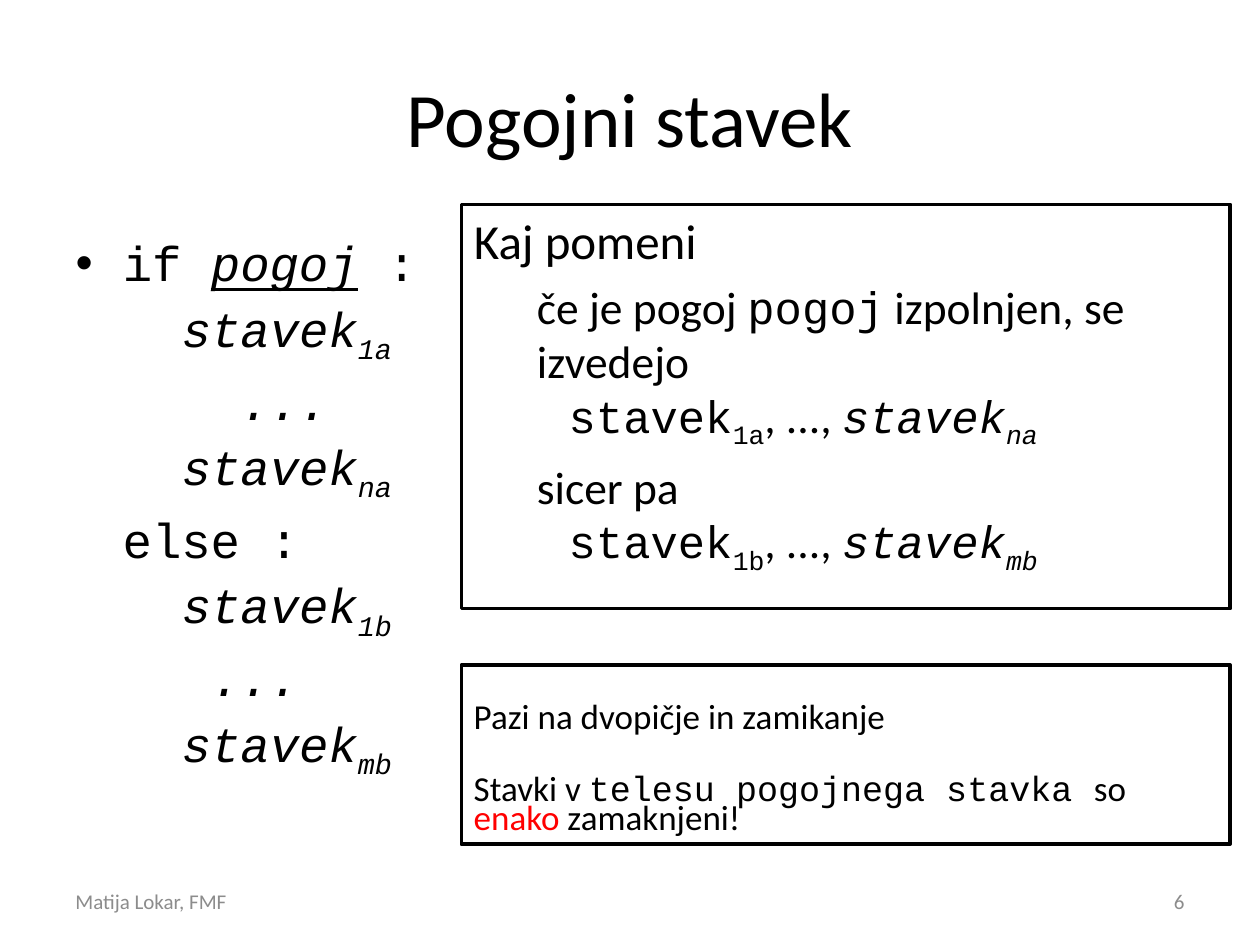
"""Build the slide on the conditional statement."""
import pptx
import pptx.dml.color
import pptx.enum.text
import pptx.oxml
import pptx.util

Cm, Pt = pptx.util.Cm, pptx.util.Pt
enum = pptx.enum.text
ns = "http://schemas.openxmlformats.org/drawingml/2006/main"
sans, mono = "Calibri", "Courier New"


def color(code):
    """Turn a hex string into a colour."""
    return pptx.dml.color.RGBColor.from_string(code)


def write(frame, size, rows, ink="000000"):
    """Fill a frame with rows of (left indent, paragraph format, runs)."""
    frame.word_wrap = True
    frame.auto_size = enum.MSO_AUTO_SIZE.NONE
    for num, (left, form, runs) in enumerate(rows):
        par = frame.add_paragraph() if num else frame.paragraphs[0]
        for key, val in form.items():
            setattr(par, key, val)
        if left is not None:
            prop = par._p.get_or_add_pPr()
            prop.set("marL", str(Cm(left)))
            prop.set("indent", "0")
            prop.append(pptx.oxml.parse_xml(f'<a:buNone xmlns:a="{ns}"/>'))
        for text, look in runs:
            run = par.add_run()
            run.text = text
            look = {"name": sans, "size": Pt(size), "ink": ink, **look}
            run.font.color.rgb = color(look.pop("ink"))
            if look.pop("sub", False):
                run._r.get_or_add_rPr().set("baseline", "-25000")
            for key, val in look.items():
                setattr(run.font, key, val)


code = {"name": mono}
slant = {"name": mono, "italic": True}
low = {"name": mono, "sub": True}
tilt = {**slant, "sub": True}

deck = pptx.Presentation()
deck.slide_width, deck.slide_height = Cm(25.4), Cm(19.05)
slide = deck.slides.add_slide(deck.slide_layouts[3])
title, list_, mean = slide.placeholders
note, foot, page = [slide.shapes.add_textbox(0, 0, 0, 0) for _ in range(3)]

spots = [
    (title, 1.27, 0.76, 22.86, 3.18),
    (list_, 1.27, 4.45, 11.23, 12.57),
    (mean, 9.3, 4.12, 15.5, 8.15),
    (note, 9.3, 13.41, 15.5, 3.61),
    (foot, 1.27, 17.65, 5.92, 1.02),
    (page, 18.21, 17.65, 5.92, 1.02),
]
for shape, *spot in spots:
    for key, val in zip(("left", "top", "width", "height"), spot):
        setattr(shape, key, Cm(val))

for box in (mean, note):
    box.fill.solid()
    box.fill.fore_color.rgb = color("FFFFFF")
    box.line.color.rgb = color("000000")
    box.line.width = Pt(2)

for shape in (title, foot, page):
    shape.text_frame.vertical_anchor = enum.MSO_ANCHOR.MIDDLE

mid = {"alignment": enum.PP_ALIGN.CENTER}
write(title.text_frame, 44, [(None, mid, [("Pogojni stavek", {})])])

loose = {"line_spacing": 1.1, "space_before": Pt(0)}
rows = [(None, loose, [("if ", code), ("pogoj", {**slant, "underline": True}),
                       (" :", code)])]
for first, last, dots in (("1a", "na", 3.32), ("1b", "mb", 2.73)):
    if first == "1b":
        rows.append((0.95, loose, [("else :", code)]))
    rows += [
        (2.14, loose, [("stavek", slant), (first, tilt)]),
        (dots, loose, [("...", slant)]),
        (2.14, loose, [("stavek", slant), (last, tilt)]),
    ]
write(list_.text_frame, 28, rows)

gap, tight = {"space_before": Pt(5.2)}, {"space_before": Pt(0)}
rows = [(0, gap, [("Kaj pomeni", {"size": Pt(28)})])]
cases = [
    ([("če je pogoj ", {}), ("pogoj", code), (" izpolnjen, se izvedejo", {})],
     "1a", "na"),
    ([("sicer pa", {})], "1b", "mb"),
]
for lead, first, last in cases:
    rows += [
        (1.27, gap, lead),
        (1.91, tight, [("stavek", code), (first, low), (", ..., ", {}),
                       ("stavek", slant), (last, tilt)]),
    ]
write(mean.text_frame, 26, rows)

note.text_frame.margin_top = Cm(0.83)
dense = {"line_spacing": 0.7}
write(note.text_frame, 20, [
    (0, dense, [("Pazi na dvopičje in zamikanje", {})]),
    (0, {**dense, "space_before": Pt(24)}, [
        ("Stavki v ", {}), ("telesu pogojnega stavka ", code), ("so ", {}),
        ("enako", {"ink": "FF0000"}), (" zamaknjeni!", {})]),
])

right = {"alignment": enum.PP_ALIGN.RIGHT}
write(foot.text_frame, 12, [(0, {}, [("Matija Lokar, FMF", {})])], "8C8C8C")
write(page.text_frame, 12, [(0, right, [("6", {})])], "8C8C8C")

deck.save("out.pptx")
